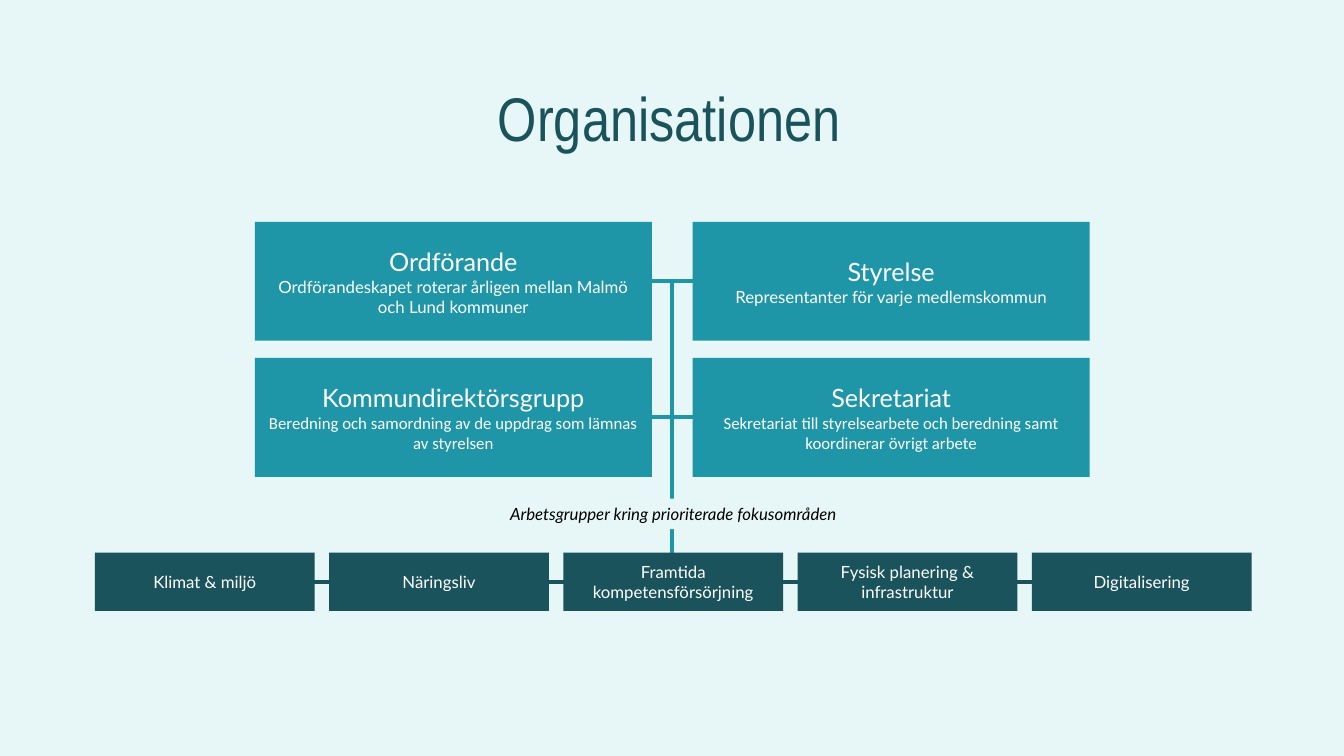
from dataclasses import dataclass

from lxml import etree
from pptx import Presentation
from pptx.dml.color import RGBColor
from pptx.enum.shapes import MSO_CONNECTOR, MSO_SHAPE
from pptx.enum.text import MSO_ANCHOR, MSO_AUTO_SIZE, PP_ALIGN
from pptx.oxml.ns import qn
from pptx.util import Pt

RECTANGLE = MSO_SHAPE.RECTANGLE
STRAIGHT = MSO_CONNECTOR.STRAIGHT
MIDDLE, TOP = MSO_ANCHOR.MIDDLE, MSO_ANCHOR.TOP
CENTER = PP_ALIGN.CENTER
FIT_SHAPE = MSO_AUTO_SIZE.SHAPE_TO_FIT_TEXT


@dataclass(frozen=True)
class Theme:
    background: RGBColor = RGBColor(0xE7, 0xF6, 0xF6)
    teal: RGBColor = RGBColor(0x1E, 0x96, 0xA8)
    dark: RGBColor = RGBColor(0x1A, 0x53, 0x5C)
    white: RGBColor = RGBColor(0xFF, 0xFF, 0xFF)
    black: RGBColor = RGBColor(0x00, 0x00, 0x00)
    title_size: int = 44
    heading_size: int = 18
    body_size: int = 12


theme = Theme()


def add_box(left, top, width, height, fill, paragraphs, anchor=MIDDLE):
    """Add a filled rectangle; paragraphs are (text, font format) pairs."""
    box = page.shapes.add_shape(RECTANGLE, Pt(left), Pt(top), Pt(width), Pt(height))
    box.shadow.inherit = False
    box.fill.solid()
    box.fill.fore_color.rgb = fill
    box.line.fill.background()
    frame = box.text_frame
    frame.word_wrap = True
    frame.vertical_anchor = anchor
    for index, (text, font_format) in enumerate(paragraphs):
        para = frame.paragraphs[0] if index == 0 else frame.add_paragraph()
        write(para, text, font_format)
    return box


def write(para, text, font_format):
    """Fill a centred paragraph with one formatted span."""
    para.alignment = CENTER
    span = para.add_run()
    span.text = text
    for name, value in font_format.items():
        if name == "color":
            span.font.color.rgb = value
        else:
            setattr(span.font, name, value)


# Text formats
title_format = {"name": "Arial Narrow", "size": Pt(theme.title_size), "color": theme.dark}
heading_format = {"name": "Lato", "size": Pt(theme.heading_size), "color": theme.white}
body_format = {"name": "Lato", "size": Pt(theme.body_size), "color": theme.white}
calibri_format = {**body_format, "name": "Calibri"}
caption_format = {**body_format, "color": theme.black, "italic": True}

# Page
deck = Presentation()
deck.slide_width, deck.slide_height = Pt(960), Pt(540)
page = deck.slides.add_slide(deck.slide_layouts[6])
page.background.fill.solid()
page.background.fill.fore_color.rgb = theme.background

# Connecting lines, behind the boxes
lines = [
    (451.5, 298, 510.5, 298, theme.teal),
    (451.5, 200.8, 510.5, 200.8, theme.teal),
    (480, 200.8, 480, 427, theme.teal),
    (203, 415.8, 778, 415.8, theme.dark),
]
for start_x, start_y, end_x, end_y, color in lines:
    line = page.shapes.add_connector(STRAIGHT, Pt(start_x), Pt(start_y), Pt(end_x), Pt(end_y))
    line.line.color.rgb = color
    line.line.width = Pt(3)
    etree.SubElement(line._element.spPr, qn("a:effectLst"))

# Title
title = page.shapes.add_textbox(Pt(80), Pt(44.6), Pt(796.3), Pt(85))
title.text_frame.word_wrap = True
title.text_frame.vertical_anchor = MIDDLE
title.text_frame.paragraphs[0].line_spacing = 0.9
write(title.text_frame.paragraphs[0], "Organisationen", title_format)

# Governing bodies, two by two
bodies = [
    ("Ordförande", "Ordförandeskapet roterar årligen mellan Malmö och Lund kommuner", body_format),
    ("Styrelse", "Representanter för varje medlemskommun", body_format),
    ("Kommundirektörsgrupp",
     "Beredning och samordning av de uppdrag som lämnas av styrelsen", calibri_format),
    ("Sekretariat",
     "Sekretariat till styrelsearbete och beredning samt koordinerar övrigt arbete", calibri_format),
]
for index, (heading, detail, detail_format) in enumerate(bodies):
    row, column = divmod(index, 2)
    add_box(182 + 312.8 * column, 158.4 + 97.2 * row, 283.6, 85, theme.teal,
            [(heading, heading_format), (detail, detail_format)])

# Working groups
groups = ["Klimat & miljö", "Näringsliv", "Framtida kompetensförsörjning",
          "Fysisk planering & infrastruktur", "Digitalisering"]
for index, group in enumerate(groups):
    add_box(67.8 + 167.3 * index, 394.8, 157, 41.6, theme.dark, [(group, body_format)])

# Caption that interrupts the vertical line
caption = add_box(356, 356.2, 250, 21.8, theme.background,
                  [("Arbetsgrupper kring prioriterade fokusområden", caption_format)], TOP)
caption.text_frame.word_wrap = False
caption.text_frame.auto_size = FIT_SHAPE

deck.save("out.pptx")
